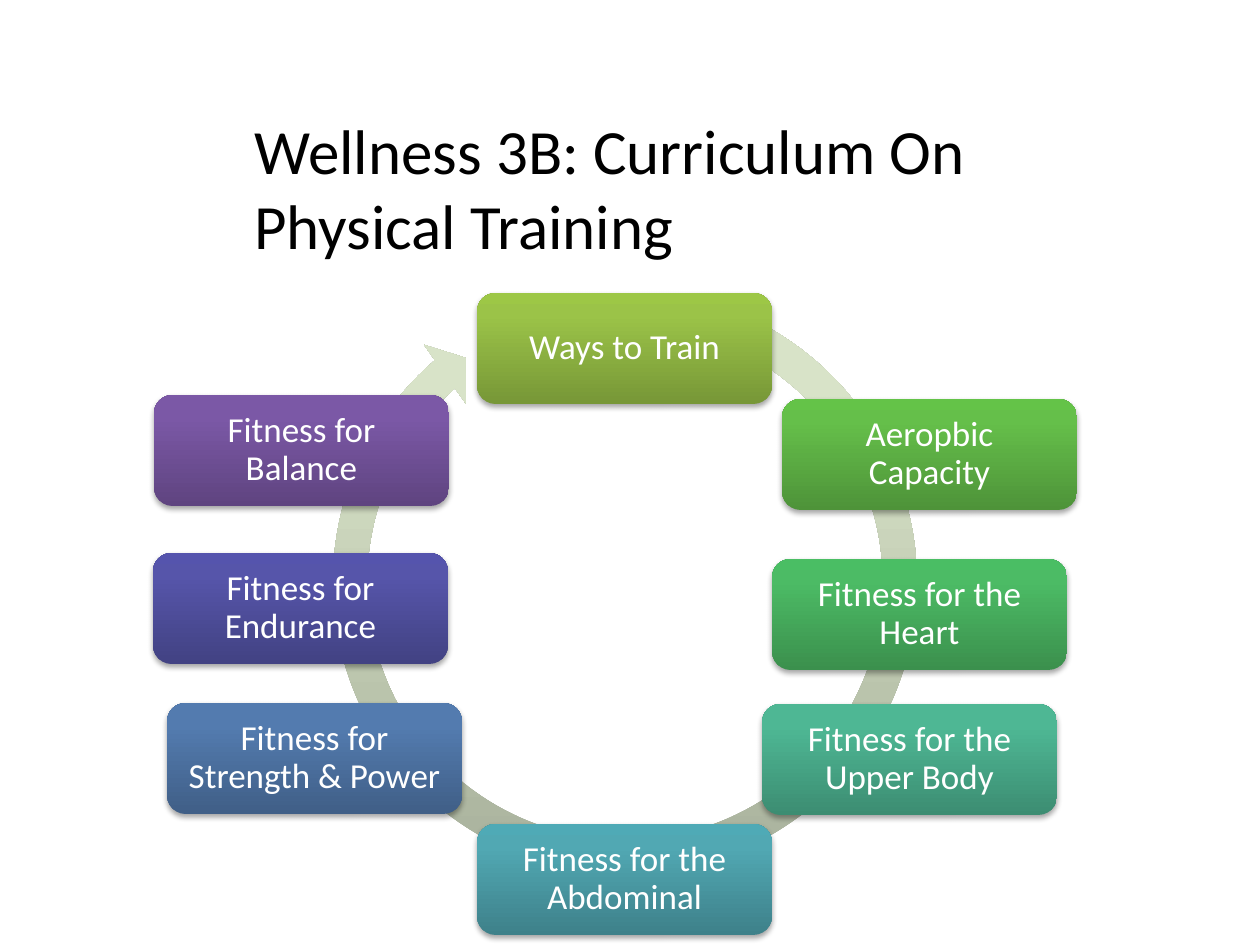
import copy

import lxml.etree
import pptx
import pptx.dml.color
import pptx.enum.shapes
import pptx.enum.text
import pptx.oxml.ns
import pptx.util

EMU_PER_PX = 914400 / 126
FONT = "Calibri"
SHAPES = pptx.enum.shapes.MSO_SHAPE
STEP_SIZE = (295, 111)
RING_COLOURS = ("A6AF9A", "D8E3C8", "D9E4C8")
RING_ADJUSTMENTS = (0.055, 3.307, 137.453, 174.046, 0.058)
STEPS = [
    ("Ways to Train", 477, 293, ("779737", "9BC348", "9DC746")),
    ("Aeropbic Capacity", 782, 399, ("4E9339", "65BF4A", "64C348")),
    ("Fitness for the Heart", 772, 559, ("3B904D", "4CBB65", "4ABE64")),
    ("Fitness for the Upper Body", 762, 704, ("3C8D72", "4EB794", "4DBA96")),
    ("Fitness for the Abdominal", 477, 824, ("3E818A", "51A8B3", "4FAAB6")),
    ("Fitness for Strength & Power", 167, 703, ("405F87", "537BAF", "527CB1")),
    ("Fitness for Endurance", 153, 553, ("424283", "5655AA", "5554AD")),
    ("Fitness for Balance", 154, 395, ("5F4480", "7B58A6", "7C57A8")),
]


def px(length):
    return pptx.util.Emu(round(length * EMU_PER_PX))


def colour(value):
    return pptx.dml.color.RGBColor.from_string(value)


class SlideBuilder:
    def __init__(self, slide):
        self.slide = slide

    def set_text(self, text_frame, text, size, text_colour):
        text_frame.word_wrap = True
        text_frame.text = text
        paragraph = text_frame.paragraphs[0]
        for run in paragraph.runs:
            run.font.name = FONT
            run.font.size = pptx.util.Pt(size)
            run.font.color.rgb = colour(text_colour)
        return paragraph

    def title(self, text, left, top, width, height):
        shape = self.slide.shapes.add_textbox(px(left), px(top), px(width), px(height))
        self.set_text(shape.text_frame, text, 36, "000000")

    def gradient_shape(self, kind, left, top, width, height, colours):
        shape = self.slide.shapes.add_shape(kind, px(left), px(top), px(width), px(height))
        shape.shadow.inherit = False
        shape.line.fill.background()
        shape.fill.gradient()
        shape.fill.gradient_angle = 90
        stop_list = shape._element.spPr.find(".//" + pptx.oxml.ns.qn("a:gsLst"))
        stop_list.append(copy.deepcopy(stop_list[0]))
        for stop, position, value in zip(shape.fill.gradient_stops, (0, 0.8, 1), colours):
            stop.position = position
            stop.color.rgb = colour(value)
        return shape

    def ring(self, left, top, size):
        shape = self.gradient_shape(SHAPES.CIRCULAR_ARROW, left, top, size, size, RING_COLOURS)
        for index, value in enumerate(RING_ADJUSTMENTS):
            shape.adjustments[index] = value

    def drop_shadow(self, shape):
        qn = pptx.oxml.ns.qn
        effects = shape._element.spPr.find(qn("a:effectLst"))
        shadow = lxml.etree.SubElement(
            effects, qn("a:outerShdw"), blurRad=str(pptx.util.Pt(3.1)),
            dist=str(pptx.util.Pt(1.8)), dir="5400000", rotWithShape="0")
        shade = lxml.etree.SubElement(shadow, qn("a:srgbClr"), val="000000")
        lxml.etree.SubElement(shade, qn("a:alpha"), val="35000")

    def step(self, text, left, top, colours):
        shape = self.gradient_shape(SHAPES.ROUNDED_RECTANGLE, left, top, *STEP_SIZE, colours)
        self.drop_shadow(shape)
        frame = shape.text_frame
        frame.margin_left = frame.margin_right = px(15)
        frame.margin_top = frame.margin_bottom = px(15)
        frame.vertical_anchor = pptx.enum.text.MSO_ANCHOR.MIDDLE
        paragraph = self.set_text(frame, text, 20, "FFFFFF")
        paragraph.alignment = pptx.enum.text.PP_ALIGN.CENTER
        paragraph.line_spacing = 0.9


def main():
    presentation = pptx.Presentation()
    presentation.slide_width = px(1260)
    presentation.slide_height = px(945)
    slide = presentation.slides.add_slide(presentation.slide_layouts[6])
    builder = SlideBuilder(slide)
    builder.title("Wellness 3B: Curriculum On Physical Training", 242, 105, 882, 165)
    builder.ring(314, 271, 622)
    for step in STEPS:
        builder.step(*step)
    presentation.save("out.pptx")


if __name__ == "__main__":
    main()
